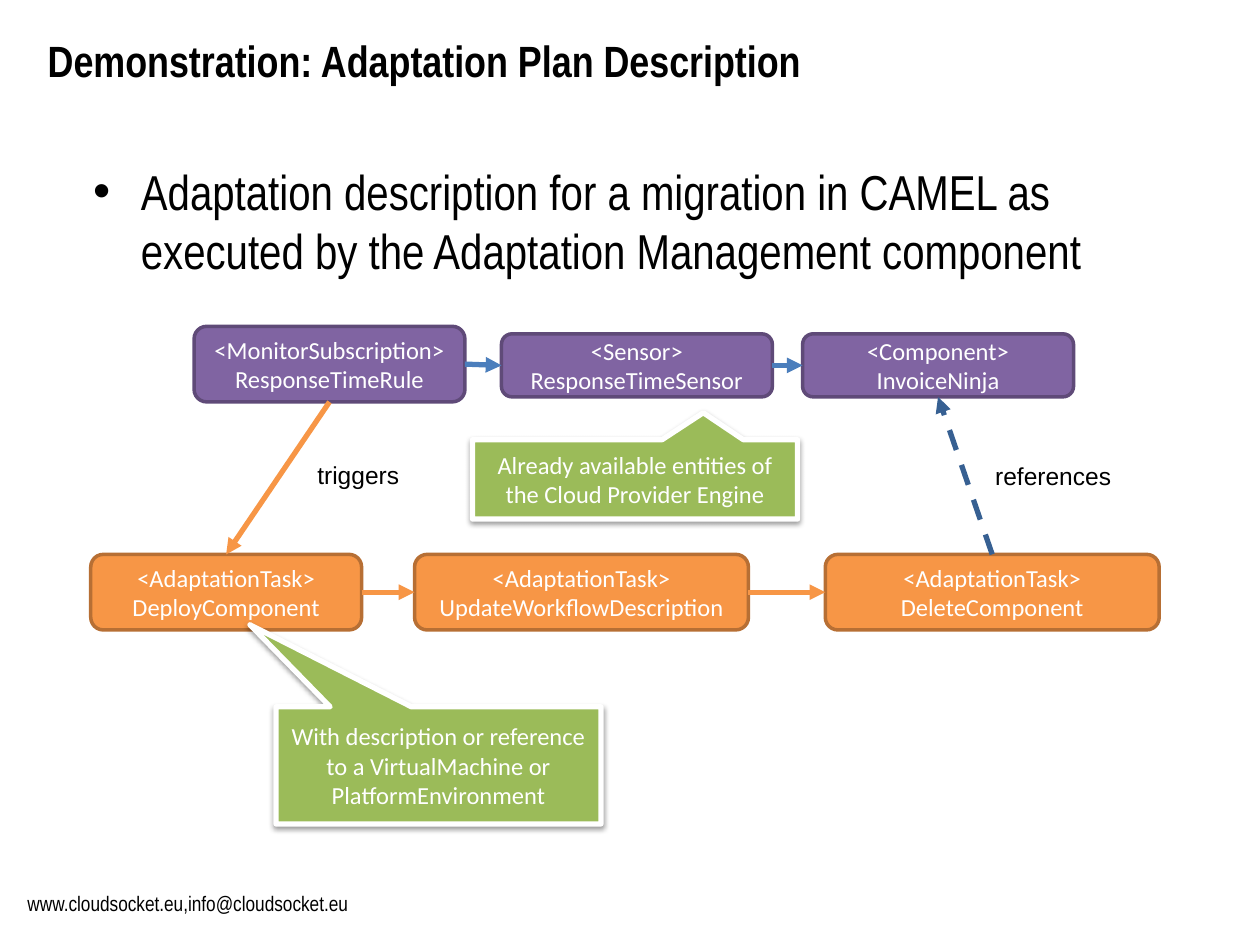
from dataclasses import dataclass
from typing import Optional

from lxml.etree import SubElement
from pptx import Presentation
from pptx.dml.color import RGBColor
from pptx.enum.dml import MSO_LINE
from pptx.enum.shapes import MSO_CONNECTOR, MSO_SHAPE
from pptx.enum.text import MSO_ANCHOR, PP_ALIGN
from pptx.oxml.ns import qn
from pptx.util import Inches, Pt


@dataclass(frozen=True)
class Theme:
    purple: str = "8064A2"
    purple_edge: str = "5F4A78"
    orange: str = "F79646"
    orange_edge: str = "B76F34"
    green: str = "9BBB59"
    blue: str = "4B7EBC"
    dark_blue: str = "376092"
    white: str = "FFFFFF"
    black: str = "000000"
    narrow: str = "Arial Narrow"
    sans: str = "Arial"
    diagram: str = "Calibri"
    title_size: int = 25
    body_size: int = 28
    label_size: int = 14
    footer_size: int = 12


@dataclass(frozen=True)
class Box:
    """Place on a grid of 100 columns and 75 rows."""
    column: float
    row: float
    columns: float
    rows: float


@dataclass(frozen=True)
class Node:
    name: str
    kind: str
    box: Box
    fill: str
    edge: str


@dataclass(frozen=True)
class Arrow:
    source: str
    source_site: int
    target: str
    target_site: int
    color: str
    dash: Optional[MSO_LINE] = None


@dataclass(frozen=True)
class Callout:
    text: str
    box: Box
    tip: tuple


@dataclass(frozen=True)
class Caption:
    text: str
    box: Box
    size: int
    font: str
    bold: bool = False
    wrap: bool = True
    anchor: MSO_ANCHOR = MSO_ANCHOR.TOP
    bullet: bool = False


THEME = Theme()
GRID_COLUMNS, GRID_ROWS = 100, 75
TOP, LEFT, BOTTOM, RIGHT = range(4)  # connection sites of a box

presentation = Presentation()
presentation.slide_width, presentation.slide_height = Inches(10), Inches(7.5)
slide = presentation.slides.add_slide(presentation.slide_layouts[6])


def place(box: Box) -> tuple:
    column = presentation.slide_width / GRID_COLUMNS
    row = presentation.slide_height / GRID_ROWS
    return (round(box.column * column), round(box.row * row),
            round(box.columns * column), round(box.rows * row))


def write(shape, lines: list, color: str, align: PP_ALIGN, frame_format: dict, font_format: dict) -> None:
    frame = shape.text_frame
    for name, value in frame_format.items():
        setattr(frame, name, value)
    frame.text = "\n".join(lines)
    for paragraph in frame.paragraphs:
        paragraph.alignment = align
        for run in paragraph.runs:
            run.font.color.rgb = RGBColor.from_string(color)
            for name, value in font_format.items():
                setattr(run.font, name, value)


def draw_block(kind: MSO_SHAPE, box: Box, fill: str, edge: str, width: float, lines: list):
    shape = slide.shapes.add_shape(kind, *place(box))
    shape.shadow.inherit = False
    shape.fill.solid()
    shape.fill.fore_color.rgb = RGBColor.from_string(fill)
    shape.line.color.rgb = RGBColor.from_string(edge)
    shape.line.width = Pt(width)
    write(shape, lines, THEME.white, PP_ALIGN.CENTER,
          {"word_wrap": True, "vertical_anchor": MSO_ANCHOR.MIDDLE},
          {"name": THEME.diagram, "size": Pt(THEME.label_size)})
    return shape


def draw_node(node: Node):
    return draw_block(MSO_SHAPE.ROUNDED_RECTANGLE, node.box, node.fill, node.edge, 2,
                      [f"<{node.kind}>", node.name])


def draw_callout(callout: Callout) -> None:
    shape = draw_block(MSO_SHAPE.RECTANGULAR_CALLOUT, callout.box, THEME.green, THEME.white, 3,
                       [callout.text])
    shape.adjustments[0], shape.adjustments[1] = callout.tip
    effects = shape._element.spPr.find(qn("a:effectLst"))
    shadow = SubElement(effects, qn("a:outerShdw"), blurRad=str(Pt(3.1)), dist=str(Pt(1.6)),
                        dir=str(90 * 60000), rotWithShape="0")
    color = SubElement(shadow, qn("a:srgbClr"), val=THEME.black)
    SubElement(color, qn("a:alpha"), val="38000")


def draw_arrow(arrow: Arrow, shapes: dict) -> None:
    connector = slide.shapes.add_connector(MSO_CONNECTOR.STRAIGHT, 0, 0, 0, 0)
    connector.begin_connect(shapes[arrow.source], arrow.source_site)
    connector.end_connect(shapes[arrow.target], arrow.target_site)
    connector.line.color.rgb = RGBColor.from_string(arrow.color)
    connector.line.width = Pt(3)
    if arrow.dash:
        connector.line.dash_style = arrow.dash
    SubElement(connector.line._get_or_add_ln(), qn("a:tailEnd"), type="triangle")
    SubElement(connector._element.spPr, qn("a:effectLst"))


def draw_caption(caption: Caption) -> None:
    shape = slide.shapes.add_textbox(*place(caption.box))
    write(shape, [caption.text], THEME.black, PP_ALIGN.LEFT,
          {"word_wrap": caption.wrap, "vertical_anchor": caption.anchor},
          {"name": caption.font, "size": Pt(caption.size), "bold": caption.bold})
    if caption.bullet:
        properties = shape.text_frame.paragraphs[0]._p.get_or_add_pPr()
        properties.set("marL", str(Inches(0.38)))
        properties.set("indent", str(-Inches(0.38)))
        SubElement(properties, qn("a:buFont"), typeface=THEME.sans)
        SubElement(properties, qn("a:buChar"), char="•")


# Title, body and footer
CAPTIONS = [
    Caption("Demonstration: Adaptation Plan Description", Box(2.8, 2.2, 94.5, 10.1),
            THEME.title_size, THEME.narrow, bold=True),
    Caption("Adaptation description for a migration in CAMEL as executed by the "
            "Adaptation Management component", Box(6.4, 12.3, 86.2, 57.5),
            THEME.body_size, THEME.narrow, bullet=True),
    Caption("www.cloudsocket.eu,info@cloudsocket.eu", Box(1.2, 68.2, 28.4, 5),
            THEME.footer_size, THEME.narrow, anchor=MSO_ANCHOR.BOTTOM),
    # Arrow labels
    Caption("triggers", Box(24.2, 36, 8.5, 3.4), THEME.label_size, THEME.sans, wrap=False),
    Caption("references", Box(78, 36.1, 11.3, 3.4), THEME.label_size, THEME.sans, wrap=False),
]

# Monitoring entities above, adaptation tasks below
PURPLE = (THEME.purple, THEME.purple_edge)
ORANGE = (THEME.orange, THEME.orange_edge)
NODES = [
    Node("ResponseTimeRule", "MonitorSubscription", Box(15.4, 25.9, 21.5, 6), *PURPLE),
    Node("ResponseTimeSensor", "Sensor", Box(39.8, 26.5, 21.5, 5), *PURPLE),
    Node("InvoiceNinja", "Component", Box(63.7, 26.5, 21.5, 5), *PURPLE),
    Node("DeployComponent", "AdaptationTask", Box(7.2, 44, 21.5, 6), *ORANGE),
    Node("UpdateWorkflowDescription", "AdaptationTask", Box(32.9, 44, 26.5, 6), *ORANGE),
    Node("DeleteComponent", "AdaptationTask", Box(65.5, 44, 26.5, 6), *ORANGE),
]
ARROWS = [
    Arrow("ResponseTimeRule", RIGHT, "ResponseTimeSensor", LEFT, THEME.blue),
    Arrow("ResponseTimeSensor", RIGHT, "InvoiceNinja", LEFT, THEME.blue),
    Arrow("ResponseTimeRule", BOTTOM, "DeployComponent", TOP, THEME.orange),
    Arrow("DeployComponent", RIGHT, "UpdateWorkflowDescription", LEFT, THEME.orange),
    Arrow("UpdateWorkflowDescription", RIGHT, "DeleteComponent", LEFT, THEME.orange),
    Arrow("DeleteComponent", TOP, "InvoiceNinja", BOTTOM, THEME.dark_blue, MSO_LINE.DASH),
]
CALLOUTS = [
    Callout("With description or reference to a VirtualMachine or PlatformEnvironment",
            Box(21.9, 56.1, 25.8, 9.3), (-0.58, -1.2)),
    Callout("Already available entities of the Cloud Provider Engine",
            Box(37.5, 34.9, 25.8, 6.3), (0.21, -0.84)),
]

for item in CAPTIONS:
    draw_caption(item)
node_shapes = {item.name: draw_node(item) for item in NODES}
for item in ARROWS:
    draw_arrow(item, node_shapes)
for item in CALLOUTS:
    draw_callout(item)

presentation.save("out.pptx")
